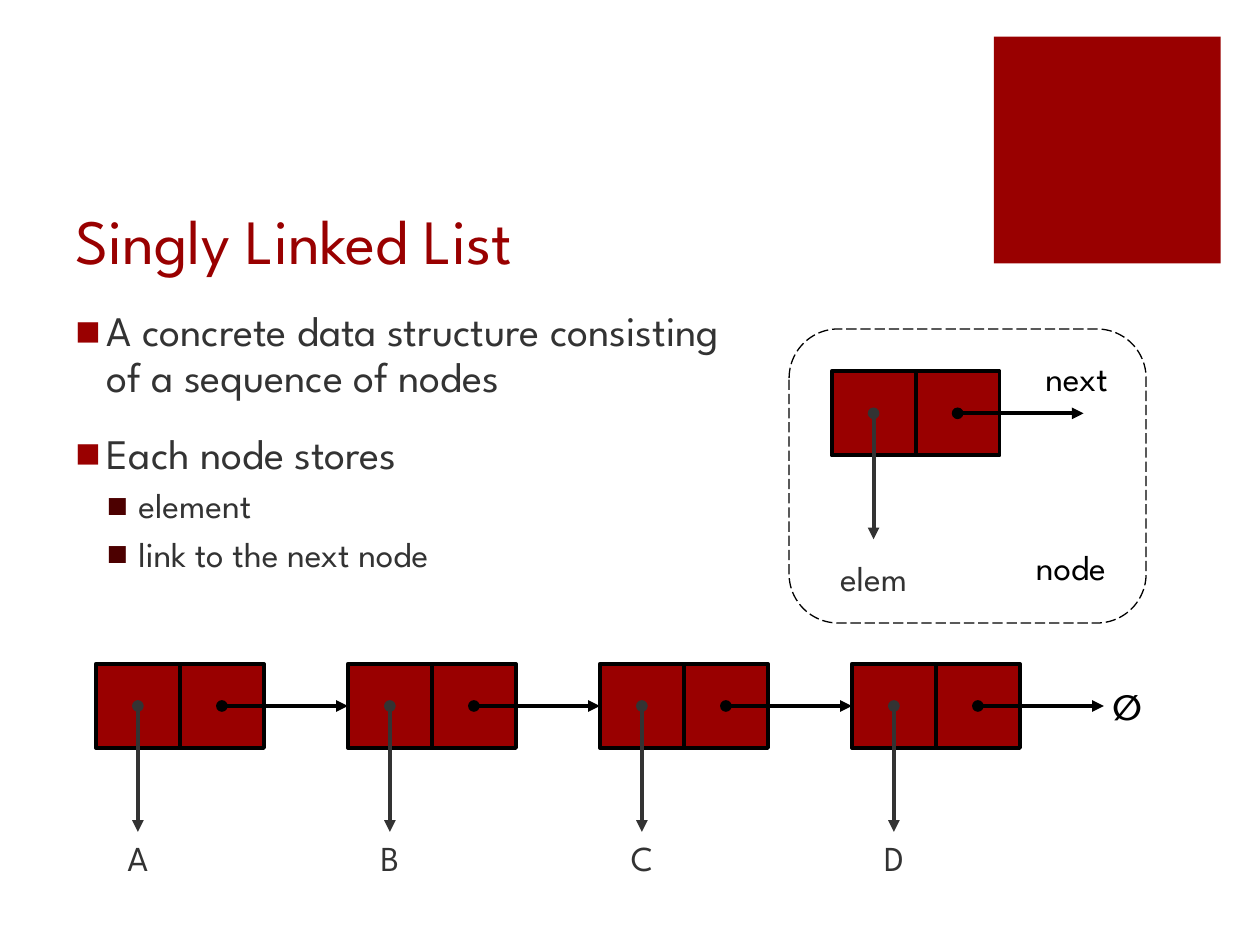
import pptx
import pptx.util
import pptx.dml.color
import pptx.enum.dml
import pptx.enum.shapes
import pptx.enum.text
import pptx.oxml
import pptx.oxml.ns

Pt = pptx.util.Pt
SHAPES = pptx.enum.shapes.MSO_SHAPE
ANCHOR = pptx.enum.text.MSO_ANCHOR
RED, DARK_RED, GREY, BLACK = "990000", "4C0000", "333333", "000000"
FONT = "League Spartan"
CELL = 48          # side of one node cell
ARROW = 72         # length of every arrow
NODE_STEP = 144    # distance between neighbouring nodes
LABEL_HEIGHT = 31


def rgb(hex_colour):
    return pptx.dml.color.RGBColor.from_string(hex_colour)


def set_all(target, values):
    for name, value in values.items():
        setattr(target, name, value)


def add_xml(parent, tag, **attributes):
    element = pptx.oxml.parse_xml(f"<a:{tag} {pptx.oxml.ns.nsdecls('a')}/>")
    for name, value in attributes.items():
        element.set(name, value)
    parent.append(element)
    return element


def add_box(slide, kind, left, top, width, height, fill=None, line_width=None):
    box = slide.shapes.add_shape(kind, Pt(left), Pt(top), Pt(width), Pt(height))
    box.shadow.inherit = False
    if fill:
        box.fill.solid()
        box.fill.fore_color.rgb = rgb(fill)
    else:
        box.fill.background()
    if line_width:
        box.line.color.rgb = rgb(BLACK)
        box.line.width = Pt(line_width)
    else:
        box.line.fill.background()
    return box


def add_arrow(slide, x, y, dx, dy, colour):
    arrow = slide.shapes.add_connector(
        pptx.enum.shapes.MSO_CONNECTOR.STRAIGHT, Pt(x), Pt(y), Pt(x + dx), Pt(y + dy))
    arrow.line.color.rgb = rgb(colour)
    arrow.line.width = Pt(2.25)
    line_xml = arrow.line._get_or_add_ln()
    add_xml(line_xml, "headEnd", type="oval")
    add_xml(line_xml, "tailEnd", type="triangle")
    add_xml(arrow._element.spPr, "effectLst")
    return arrow


def add_text_frame(slide, left, top, width, height, **frame_format):
    frame = slide.shapes.add_textbox(Pt(left), Pt(top), Pt(width), Pt(height)).text_frame
    set_all(frame, {"word_wrap": True, **frame_format})
    return frame


def write(paragraph, text, size, colour, **paragraph_format):
    set_all(paragraph, paragraph_format)
    run = paragraph.add_run()
    run.text = text
    set_all(run.font, {"name": FONT, "size": Pt(size)})
    run.font.color.rgb = rgb(colour)
    return run


def add_label(slide, text, centre, top, width, colour):
    frame = add_text_frame(slide, centre - width / 2, top, width, LABEL_HEIGHT, word_wrap=False,
                           auto_size=pptx.enum.text.MSO_AUTO_SIZE.SHAPE_TO_FIT_TEXT)
    return write(frame.paragraphs[0], text, 20, colour,
                 alignment=pptx.enum.text.PP_ALIGN.CENTER)


def add_bullets(slide, frame, items):
    for index, (level, text) in enumerate(items):
        paragraph = frame.add_paragraph() if index else frame.paragraphs[0]
        size, before, bullet_colour = ((24, 18, RED), (20, 6, DARK_RED))[level]
        write(paragraph, text, size, GREY, level=level, line_spacing=0.9, space_before=Pt(before))
        properties = paragraph._p.get_or_add_pPr()
        properties.set("marL", str(Pt(18 * (level + 1))))
        properties.set("indent", str(-Pt(18)))
        add_xml(add_xml(properties, "buClr"), "srgbClr", val=bullet_colour)
        add_xml(properties, "buFont", typeface="Arial")
        add_xml(properties, "buChar", char="■")


def add_node(slide, left, top):
    """Draw both cells and both arrows; return the element cell and the link."""
    element_cell, _ = [add_box(slide, SHAPES.RECTANGLE, left + i * CELL, top, CELL, CELL, RED, 2.25)
                       for i in range(2)]
    middle = top + CELL / 2
    add_arrow(slide, left + CELL / 2, middle, 0, ARROW, GREY)
    link = add_arrow(slide, left + CELL * 1.5, middle, ARROW, 0, BLACK)
    return element_cell, link


def add_node_legend(slide):
    left, top = 475.2, 212.2
    border = add_box(slide, SHAPES.ROUNDED_RECTANGLE, 450.9, 188, 204, 168, line_width=0.75)
    border.adjustments[0] = 0.167
    border.line.dash_style = pptx.enum.dml.MSO_LINE.LONG_DASH
    add_node(slide, left, top)
    add_label(slide, "next", 615.2, 200, 53, BLACK)
    add_label(slide, "elem", left + CELL / 2, 314.6, 57, GREY)
    add_label(slide, "node", 612, 308, 58, BLACK)


def add_linked_list(slide, elements):
    left, top = 54.8, 379.4
    previous_link = None
    for index, element in enumerate(elements):
        node_left = left + index * NODE_STEP
        element_cell, link = add_node(slide, node_left, top)
        if previous_link is not None:
            previous_link.end_connect(element_cell, 1)
        add_label(slide, element, node_left + CELL / 2, 474.5, 27, GREY)
        previous_link = link
    null_sign = add_label(slide, "∅", 644, 388.2, 31, BLACK)
    null_sign.font.bold = True


def main():
    presentation = pptx.Presentation()
    set_all(presentation, {"slide_width": Pt(720), "slide_height": Pt(540)})
    slide = presentation.slides.add_slide(presentation.slide_layouts[6])

    # Corner square and title
    add_box(slide, SHAPES.RECTANGLE, 568, 21, 129.6, 129.6, RED)
    title = add_text_frame(slide, 36, 72, 513, 90, vertical_anchor=ANCHOR.BOTTOM)
    write(title.paragraphs[0], "Singly Linked List", 36, RED)

    # Definition
    definition = add_text_frame(slide, 36, 174, 397.5, 308)
    add_bullets(slide, definition, [
        (0, "A concrete data structure consisting of a sequence of nodes"),
        (0, "Each node stores"),
        (1, "element"),
        (1, "link to the next node"),
    ])

    # Diagrams
    add_node_legend(slide)
    add_linked_list(slide, "ABCD")

    presentation.save("out.pptx")


if __name__ == "__main__":
    main()
